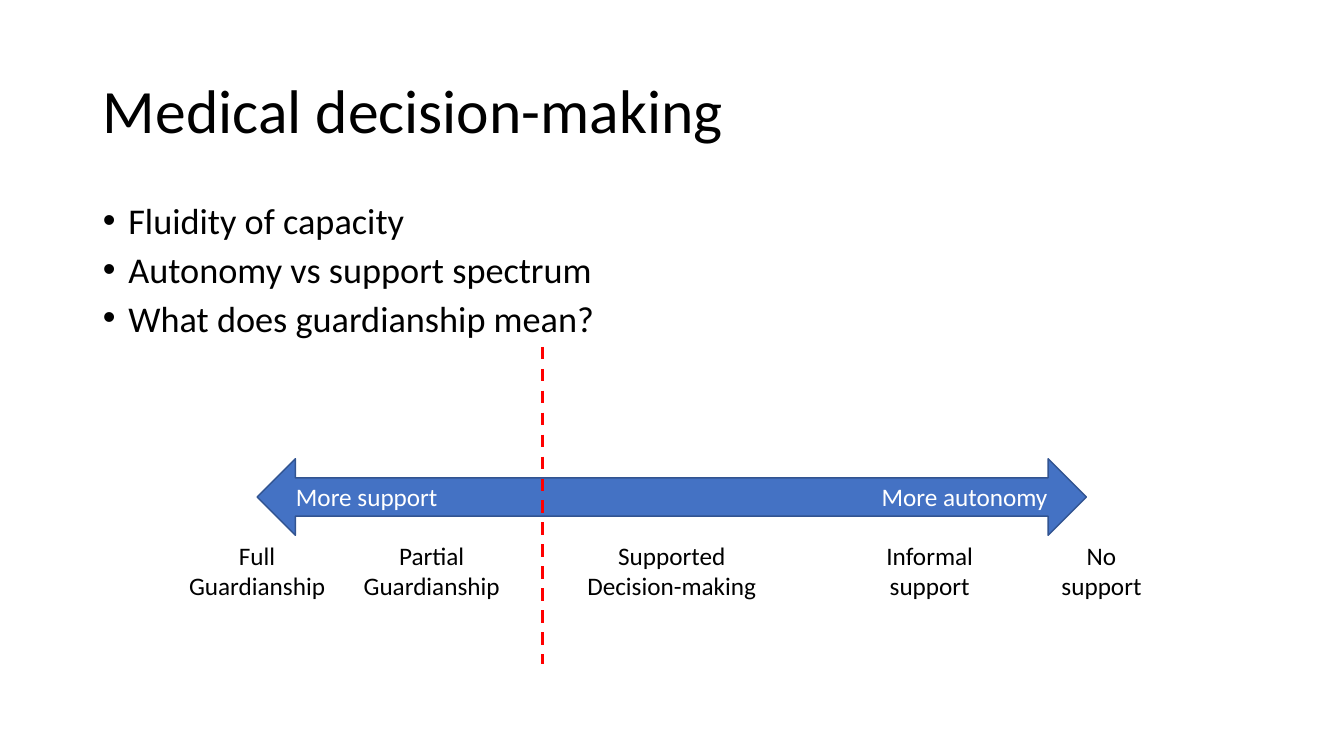
from lxml import etree
from pptx import Presentation
from pptx.dml.color import RGBColor
from pptx.enum.dml import MSO_LINE
from pptx.enum.shapes import MSO_CONNECTOR, MSO_SHAPE
from pptx.enum.text import MSO_ANCHOR, MSO_AUTO_SIZE, PP_ALIGN
from pptx.oxml.ns import qn
from pptx.util import Cm, Pt

LEFT, CENTER, RIGHT = PP_ALIGN.LEFT, PP_ALIGN.CENTER, PP_ALIGN.RIGHT
TOP, MIDDLE = MSO_ANCHOR.TOP, MSO_ANCHOR.MIDDLE
NO_FIT = MSO_AUTO_SIZE.NONE
ARROW, STRAIGHT, DASH = MSO_SHAPE.LEFT_RIGHT_ARROW, MSO_CONNECTOR.STRAIGHT, MSO_LINE.DASH

BLACK, WHITE, RED = "000000", "FFFFFF", "FF0000"
BLUE, DARK_BLUE = "4472C4", "325491"

TOPICS = ["Fluidity of capacity", "Autonomy vs support spectrum",
          "What does guardianship mean?"]
# Paragraphs, centre measured from the arrow's left tip, width (cm)
STAGES = [
    (["Full", "Guardianship"], 0, 4.04),
    (["Partial", "Guardianship"], 4.4, 4.04),
    (["Supported Decision-making"], 10.45, 4.95),
    (["Informal support"], 16.95, 4.04),
    (["No support"], 21.28, 3.25),
]


def color(value):
    return RGBColor.from_string(value)


def apply(target, formats):
    for name, value in formats.items():
        setattr(target, name, value)


def place(shape, left, top, width, height):
    apply(shape, {"left": Cm(left), "top": Cm(top),
                  "width": Cm(width), "height": Cm(height)})


def write(shape, lines, size, hue, para_formats, anchor=TOP):
    frame = shape.text_frame
    apply(frame, {"word_wrap": True, "auto_size": NO_FIT, "vertical_anchor": anchor})
    for index, line in enumerate(lines):
        para = frame.paragraphs[0] if index == 0 else frame.add_paragraph()
        apply(para, para_formats)
        span = para.add_run()
        span.text = line
        apply(span.font, {"name": "Calibri", "size": Pt(size)})
        span.font.color.rgb = color(hue)


def add_label(page, box, lines, hue, alignment):
    label = page.shapes.add_textbox(*map(Cm, box))
    write(label, lines, 18, hue, {"alignment": alignment})


def add_heading(page, box):
    title = page.shapes.title
    place(title, *box)
    write(title, ["Medical decision-making"], 44, BLACK,
          {"alignment": LEFT, "line_spacing": 0.9}, MIDDLE)


def add_topics(page, box):
    body = page.placeholders[1]
    place(body, *box)
    write(body, TOPICS, 25.9, BLACK,
          {"alignment": LEFT, "line_spacing": 0.8, "space_before": Pt(10)})
    # Bullets with a hanging indent
    for para in body.text_frame.paragraphs:
        properties = para._p.get_or_add_pPr()
        properties.set("marL", str(Cm(0.64)))
        properties.set("indent", str(-Cm(0.64)))
        font = etree.SubElement(properties, qn("a:buFont"))
        font.set("typeface", "Arial")
        bullet = etree.SubElement(properties, qn("a:buChar"))
        bullet.set("char", "•")


def add_spectrum(page, box):
    left, top, width, height = box

    # Two-headed arrow
    arrow = page.shapes.add_shape(ARROW, *map(Cm, box))
    arrow.shadow.inherit = False
    arrow.fill.solid()
    arrow.fill.fore_color.rgb = color(BLUE)
    arrow.line.color.rgb = color(DARK_BLUE)
    arrow.line.width = Pt(1)

    # Stages below the arrow
    for lines, center, stage_width in STAGES:
        stage_box = (left + center - stage_width / 2, top + height, stage_width, 1.8)
        add_label(page, stage_box, lines, BLACK, CENTER)

    # Captions at both ends of the arrow
    end_width, inset = 4.8, 0.73
    add_label(page, (left + inset, top + 0.45, end_width, 1.02),
              ["More support"], WHITE, LEFT)
    add_label(page, (left + width - inset - end_width, top + 0.45, end_width, 1.02),
              ["More autonomy"], WHITE, RIGHT)

    # Dashed guardianship boundary
    boundary_x = left + 7.19
    boundary = page.shapes.add_connector(
        STRAIGHT, Cm(boundary_x), Cm(top - 2.82), Cm(boundary_x), Cm(top + 5.18))
    boundary.line.color.rgb = color(RED)
    apply(boundary.line, {"width": Pt(2.25), "dash_style": DASH})
    etree.SubElement(boundary._element.spPr, qn("a:effectLst"))


def main():
    deck = Presentation()
    apply(deck, {"slide_width": Cm(33.87), "slide_height": Cm(19.05)})
    page = deck.slides.add_slide(deck.slide_layouts[1])
    add_heading(page, (2.34, 1.02, 29.21, 3.68))
    add_topics(page, (2.34, 5.08, 29.21, 3.66))
    add_spectrum(page, (6.48, 11.56, 20.9, 1.93))
    deck.save("out.pptx")


if __name__ == "__main__":
    main()
